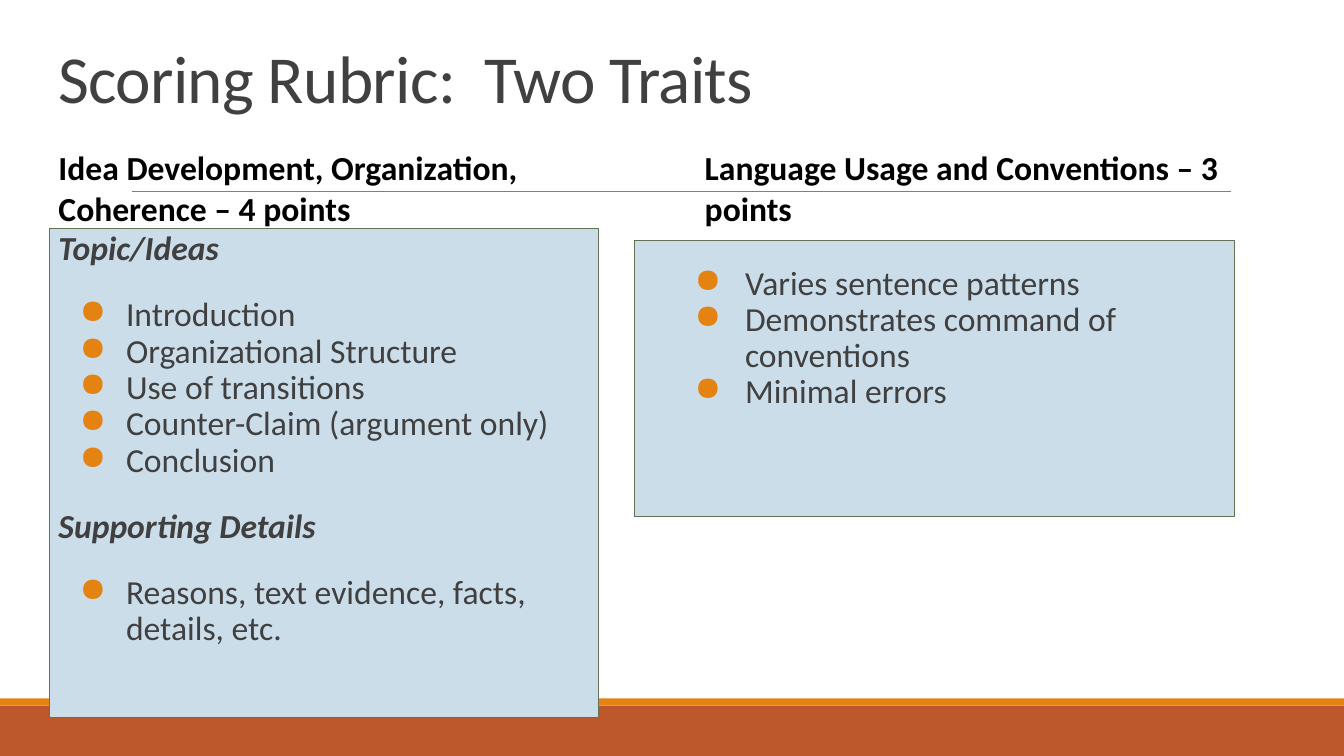
from dataclasses import dataclass

from lxml.etree import SubElement
from pptx import Presentation
from pptx.dml.color import RGBColor as Rgb
from pptx.enum.shapes import MSO_CONNECTOR as Connector, MSO_SHAPE as Shape
from pptx.enum.text import MSO_ANCHOR as Anchor, MSO_AUTO_SIZE as AutoSize
from pptx.oxml.ns import qn
from pptx.slide import Slide
from pptx.util import Inches, Pt


@dataclass(frozen=True)
class Theme:
    font: str = "Calibri"
    title_size: float = 48
    text_size: float = 24
    ink: str = "404040"
    heading: str = "000000"
    accent: str = "E48312"
    footer: str = "BD582C"
    panel: str = "CCDDEA"
    panel_edge: str = "637052"
    rule: str = "808080"


@dataclass(frozen=True)
class Box:
    left: float
    top: float
    width: float
    height: float

    def lengths(self) -> list[int]:
        return [Inches(n) for n in (self.left, self.top, self.width, self.height)]


@dataclass(frozen=True)
class Line:
    text: str
    size: float
    color: str
    bold: bool = False
    italic: bool = False
    hanging: float = 0
    line_spacing: float = 0.9
    space_before: float = 0
    tracking: float = 0


@dataclass(frozen=True)
class Group:
    """A trait's points, under an optional subheading."""
    points: tuple[str, ...]
    subheading: str = ""


@dataclass(frozen=True)
class Trait:
    heading: str
    heading_box: Box
    panel: Box
    body: Box
    hanging: float
    groups: tuple[Group, ...]


THEME = Theme()
INSET = 0.13
POINT_INDENT = 0.67
GROUP_GAP = 21.3

TRAITS = (
    Trait(
        "Idea Development, Organization, Coherence – 4 points",
        Box(0.45, 1.33, 6.25, 0.69),
        Box(0.49, 2.27, 5.45, 4.85),
        Box(0.45, 2.17, 5.45, 4.87),
        0.46,
        (
            Group(("Introduction", "Organizational Structure", "Use of transitions",
                   "Counter-Claim (argument only)", "Conclusion"), "Topic/Ideas"),
            Group(("Reasons, text evidence, facts, details, etc.",), "Supporting Details"),
        ),
    ),
    Trait(
        "Language Usage and Conventions – 3 points",
        Box(6.86, 1.33, 5.61, 0.84),
        Box(6.29, 2.39, 5.95, 2.73),
        Box(6.59, 2.51, 5.83, 2.48),
        0.5,
        (Group(("Varies sentence patterns", "Demonstrates command of conventions",
                "Minimal errors")),),
    ),
)


def add_block(slide: Slide, box: Box, fill: str, edge: str = "") -> None:
    block = slide.shapes.add_shape(Shape.RECTANGLE, *box.lengths())
    block.shadow.inherit = False
    block.fill.solid()
    block.fill.fore_color.rgb = Rgb.from_string(fill)
    if edge:
        block.line.color.rgb = Rgb.from_string(edge)
        block.line.width = Pt(0.75)
    else:
        block.line.fill.background()


def add_rule(slide: Slide, left: float, right: float, y: float) -> None:
    rule = slide.shapes.add_connector(
        Connector.STRAIGHT, Inches(left), Inches(y), Inches(right), Inches(y))
    rule.line.color.rgb = Rgb.from_string(THEME.rule)
    rule.line.width = Pt(0.5)
    SubElement(rule._element.spPr, qn("a:effectLst"))


def add_text(slide: Slide, box: Box, lines: list[Line]) -> None:
    frame = slide.shapes.add_textbox(*box.lengths()).text_frame
    frame.word_wrap = True
    frame.auto_size = AutoSize.NONE
    frame.vertical_anchor = Anchor.TOP
    frame.margin_left = frame.margin_right = Inches(INSET)
    frame.margin_top = frame.margin_bottom = Inches(INSET)
    for index, line in enumerate(lines):
        paragraph = frame.add_paragraph() if index else frame.paragraphs[0]
        paragraph.line_spacing = line.line_spacing
        paragraph.space_before = Pt(line.space_before)
        if line.hanging:
            properties = paragraph._p.get_or_add_pPr()
            properties.set("marL", str(Inches(POINT_INDENT)))
            properties.set("indent", str(-Inches(line.hanging)))
            bullet_color = SubElement(properties, qn("a:buClr"))
            SubElement(bullet_color, qn("a:srgbClr"), val=THEME.accent)
            SubElement(properties, qn("a:buChar"), char="●")
        run = paragraph.add_run()
        run.text = line.text
        run.font.name = THEME.font
        run.font.size = Pt(line.size)
        run.font.bold = line.bold
        run.font.italic = line.italic
        run.font.color.rgb = Rgb.from_string(line.color)
        if line.tracking:
            run._r.get_or_add_rPr().set("spc", str(round(line.tracking * 100)))


def trait_lines(trait: Trait) -> list[Line]:
    """Flatten the groups, with a gap around every subheading."""
    lines: list[Line] = []
    for group in trait.groups:
        if group.subheading:
            lines.append(Line(group.subheading, THEME.text_size, THEME.ink, bold=True,
                              italic=True, space_before=GROUP_GAP if lines else 0))
        for index, point in enumerate(group.points):
            gap = GROUP_GAP if group.subheading and index == 0 else 0
            lines.append(Line(point, THEME.text_size, THEME.ink,
                              hanging=trait.hanging, space_before=gap))
    return lines


def main() -> None:
    deck = Presentation()
    deck.slide_width, deck.slide_height = Inches(13.33), Inches(7.5)
    slide = deck.slides.add_slide(deck.slide_layouts[6])

    add_block(slide, Box(0, 7, 13.33, 0.5), THEME.footer)
    add_block(slide, Box(0, 6.93, 13.33, 0.07), THEME.accent)
    add_rule(slide, 1.31, 12.21, 1.9)
    add_text(slide, Box(0.45, 0.35, 8.89, 0.84), [
        Line("Scoring Rubric:  Two Traits", THEME.title_size, THEME.ink,
             line_spacing=0.85, tracking=-0.5)])
    for trait in TRAITS:
        add_block(slide, trait.panel, THEME.panel, THEME.panel_edge)
        add_text(slide, trait.body, trait_lines(trait))
        add_text(slide, trait.heading_box, [
            Line(trait.heading, THEME.text_size, THEME.heading, bold=True, line_spacing=1.0)])

    deck.save("out.pptx")


if __name__ == "__main__":
    main()
